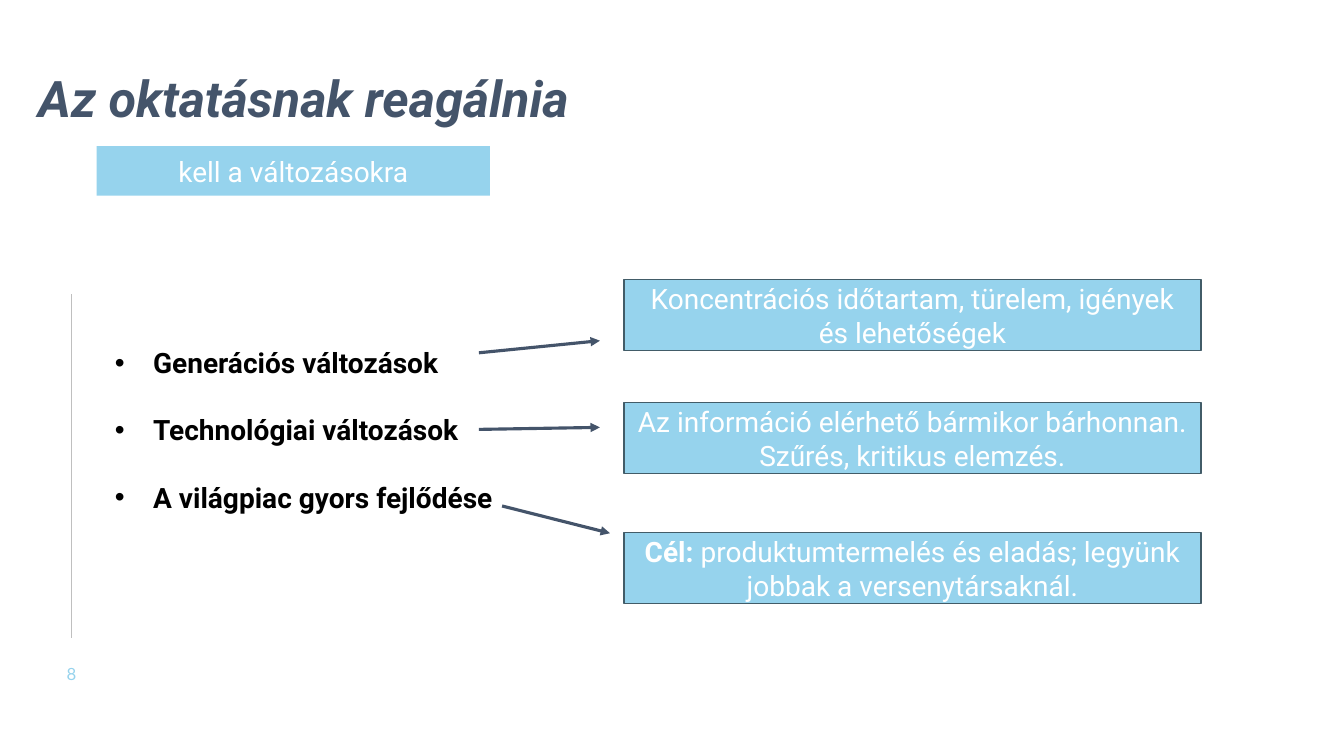
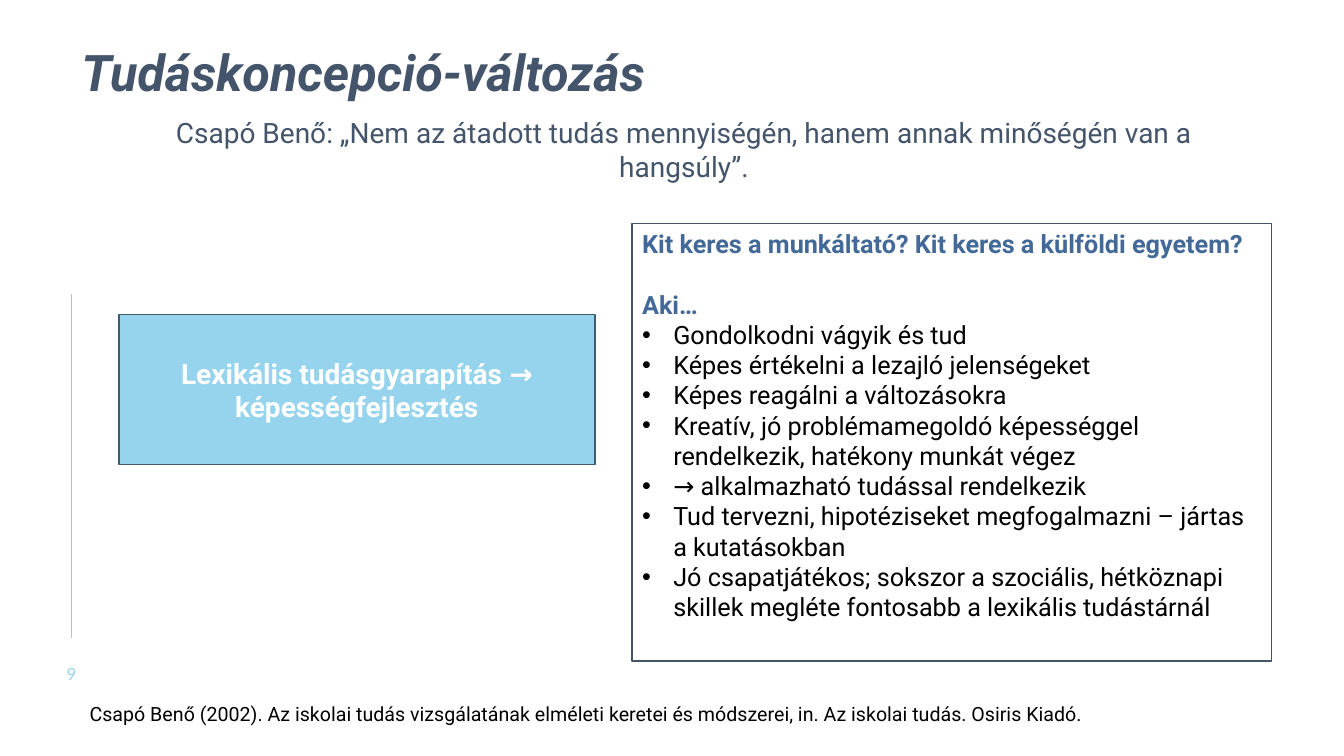
from lxml import etree
from pptx import Presentation
from pptx.dml.color import RGBColor
from pptx.enum.shapes import MSO_CONNECTOR, MSO_SHAPE
from pptx.enum.text import MSO_ANCHOR, PP_ALIGN
from pptx.oxml.ns import qn
from pptx.util import Inches, Pt

STRAIGHT = MSO_CONNECTOR.STRAIGHT
RECTANGLE = MSO_SHAPE.RECTANGLE
TOP, MIDDLE = MSO_ANCHOR.TOP, MSO_ANCHOR.MIDDLE
LEFT, CENTER = PP_ALIGN.LEFT, PP_ALIGN.CENTER

COLORS = {
    "sky": "96D3ED",
    "slate": "44546A",
    "edge": "425C68",
    "heading": "436999",
    "rail": "BFBFBF",
    "black": "000000",
    "white": "FFFFFF",
}


def rgb(name):
    return RGBColor.from_string(COLORS[name])


class Deck:
    """Holds the shared style and the slide being built."""

    font = "Roboto"
    number_font = "Lato"

    def __init__(self):
        self.presentation = Presentation()
        self.presentation.slide_width = Inches(13.33)
        self.presentation.slide_height = Inches(7.5)
        self.page = None

    def add_page(self, number, title, left, top):
        """Start a slide with the side rail, its number and its title."""
        layout = self.presentation.slide_layouts[6]
        self.page = self.presentation.slides.add_slide(layout)
        self.line((0.71, 2.92), (0.71, 6.33), "rail", 0.5)
        frame = self.text_frame(0.46, 6.58, 0.5, 0.2, MIDDLE, margin=0)
        self.paragraph(frame, number, 12, "sky", align=CENTER,
                       font=self.number_font)
        frame = self.text_frame(left, top, 10.83, 0.71)
        self.paragraph(frame, title, 36, "slate", bold=True, italic=True)

    def text_frame(self, left, top, width, height, anchor=TOP, margin=None):
        box = self.page.shapes.add_textbox(
            Inches(left), Inches(top), Inches(width), Inches(height))
        frame = box.text_frame
        frame.word_wrap = True
        frame.vertical_anchor = anchor
        if margin is not None:
            frame.margin_left = frame.margin_right = Inches(margin)
            frame.margin_top = frame.margin_bottom = Inches(margin)
        return frame

    def panel(self, left, top, width, height, fill="sky", edge="edge",
              anchor=MIDDLE):
        """Draw a filled rectangle and return its text frame."""
        box = self.page.shapes.add_shape(
            RECTANGLE, Inches(left), Inches(top), Inches(width), Inches(height))
        box.shadow.inherit = False
        box.fill.solid()
        box.fill.fore_color.rgb = rgb(fill)
        if edge:
            box.line.color.rgb = rgb(edge)
            box.line.width = Pt(1)
        else:
            box.line.fill.background()
        box.text_frame.word_wrap = True
        box.text_frame.vertical_anchor = anchor
        return box.text_frame

    def paragraph(self, frame, text, size, color, bold=False, italic=False,
                  align=LEFT, font=None, before=0, indent=0):
        """Fill the empty first paragraph or append one; indent adds a bullet."""
        para = frame.paragraphs[0]
        if para.runs:
            para = frame.add_paragraph()
        para.alignment = align
        if before:
            para.space_before = Pt(before)
        if indent:
            properties = para._p.get_or_add_pPr()
            properties.set("marL", str(Inches(indent)))
            properties.set("indent", str(-Inches(indent)))
            etree.SubElement(properties, qn("a:buFont"), typeface="Arial")
            etree.SubElement(properties, qn("a:buChar"), char="•")
        self.span(para, text, size, color, bold, italic, font)
        return para

    def span(self, para, text, size, color, bold=False, italic=False, font=None):
        run = para.add_run()
        run.text = text
        run.font.name = font or self.font
        run.font.size = Pt(size)
        run.font.bold = bold
        run.font.italic = italic
        run.font.color.rgb = rgb(color)

    def line(self, start, end, color, width, arrow=False):
        connector = self.page.shapes.add_connector(
            STRAIGHT, *(Inches(value) for value in (*start, *end)))
        connector.line.color.rgb = rgb(color)
        connector.line.width = Pt(width)
        if arrow:
            etree.SubElement(connector.line._get_or_add_ln(), qn("a:tailEnd"),
                             type="triangle")
        etree.SubElement(connector._element.spPr, qn("a:effectLst"))

    def save(self):
        self.presentation.save("out.pptx")


def build_changes(deck):
    deck.add_page("8", "Az oktatásnak reagálnia", 0.28, 0.62)
    frame = deck.panel(0.96, 1.45, 3.9, 0.49, edge=None)
    deck.paragraph(frame, "kell a változásokra", 20, "white", align=CENTER)

    frame = deck.text_frame(1.04, 3.38, 5.02, 2.39)
    changes = ("Generációs változások", "Technológiai változások",
               "A világpiac gyors fejlődése")
    for index, change in enumerate(changes):
        deck.paragraph(frame, change, 20, "black", bold=True,
                       before=24 if index else 0, indent=0.38)

    effects = (
        (2.77, (("Koncentrációs időtartam, türelem, igények és lehetőségek",
                 False),)),
        (3.99, (("Az információ elérhető bármikor bárhonnan. "
                 "Szűrés, kritikus elemzés.", False),)),
        (5.28, (("Cél: ", True),
                ("produktumtermelés és eladás; legyünk jobbak a "
                 "versenytársaknál.", False))),
    )
    for top, ((first, bold), *others) in effects:
        frame = deck.panel(6.19, top, 5.72, 0.71)
        para = deck.paragraph(frame, first, 20, "white", bold, align=CENTER)
        for text, other_bold in others:
            deck.span(para, text, 20, "white", other_bold)

    arrows = (((4.75, 3.5), (5.95, 3.38)),
              ((4.75, 4.26), (5.95, 4.24)),
              ((4.98, 5.02), (6.05, 5.29)))
    for start, end in arrows:
        deck.line(start, end, "slate", 2.25, arrow=True)


def build_knowledge(deck):
    deck.add_page("9", "Tudáskoncepció-változás", 0.71, 0.36)
    frame = deck.text_frame(1.37, 1.1, 10.83, 0.77)
    deck.paragraph(frame, "Csapó Benő: „Nem az átadott tudás mennyiségén, hanem "
                   "annak minőségén van a hangsúly”.", 20, "slate", align=CENTER)

    frame = deck.panel(6.27, 2.22, 6.34, 4.34, "white", "slate", TOP)
    deck.paragraph(frame, "Kit keres a munkáltató? Kit keres a külföldi egyetem?",
                   18, "heading", bold=True)
    deck.paragraph(frame, "Aki…", 18, "heading", bold=True, before=21.5)
    skills = (
        "Gondolkodni vágyik és tud",
        "Képes értékelni a lezajló jelenségeket",
        "Képes reagálni a változásokra",
        "Kreatív, jó problémamegoldó képességgel rendelkezik, hatékony munkát "
        "végez",
        "→ alkalmazható tudással rendelkezik",
        "Tud tervezni, hipotéziseket megfogalmazni – jártas a kutatásokban",
        "Jó csapatjátékos; sokszor a szociális, hétköznapi skillek megléte "
        "fontosabb a lexikális tudástárnál",
    )
    for skill in skills:
        deck.paragraph(frame, skill, 18, "black", indent=0.31)

    frame = deck.panel(1.18, 3.12, 4.72, 1.49)
    deck.paragraph(frame, "Lexikális tudásgyarapítás → képességfejlesztés",
                   20, "white", bold=True, align=CENTER)

    frame = deck.text_frame(0.79, 6.91, 10.22, 0.34)
    deck.paragraph(frame, "Csapó Benő (2002). Az iskolai tudás vizsgálatának "
                   "elméleti keretei és módszerei, in. Az iskolai tudás. "
                   "Osiris Kiadó.", 14, "black")


def main():
    deck = Deck()
    build_changes(deck)
    build_knowledge(deck)
    deck.save()


if __name__ == "__main__":
    main()
